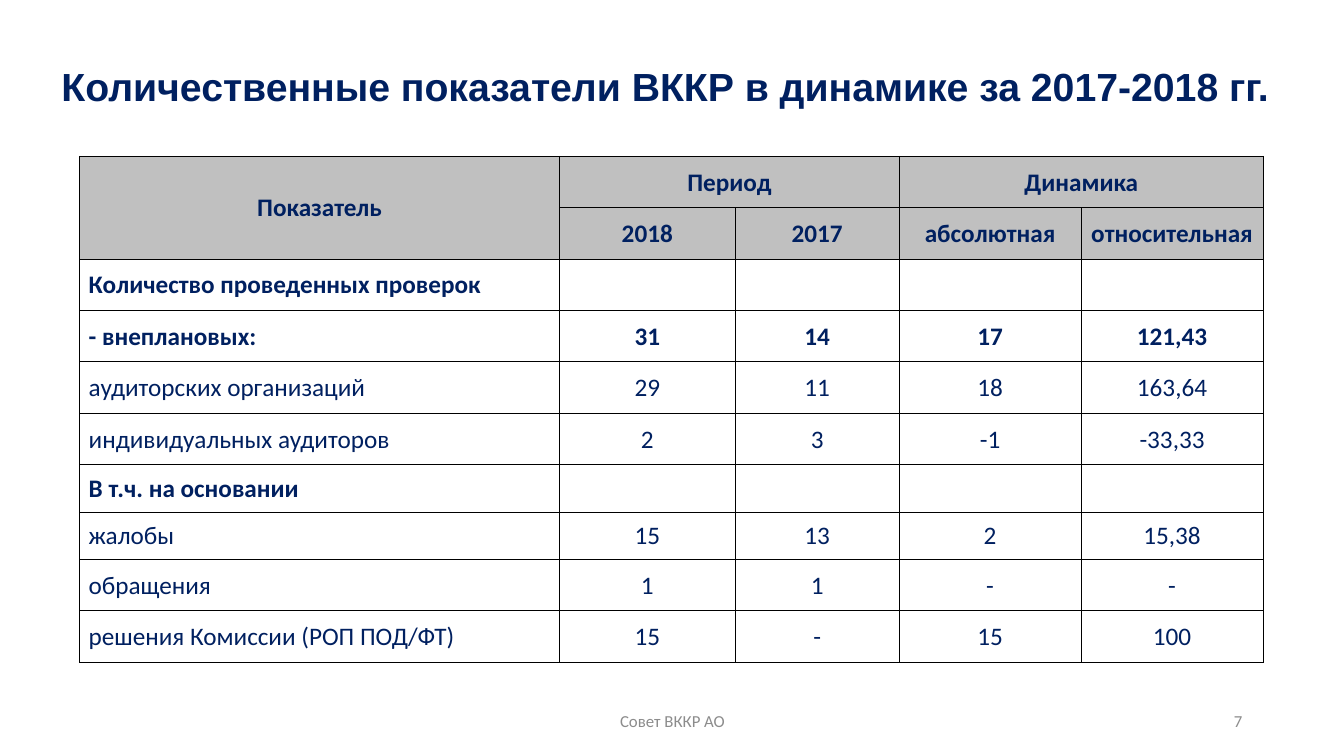
from dataclasses import dataclass
from typing import Any

from lxml.etree import SubElement
from pptx import Presentation
from pptx.dml.color import RGBColor
from pptx.enum.text import MSO_ANCHOR, PP_ALIGN
from pptx.oxml.ns import qn
from pptx.util import Inches, Pt


@dataclass(frozen=True)
class Theme:
    navy: str = "002060"
    head: str = "C0C0C0"
    gray: str = "8C8C8C"
    line: str = "000000"
    title: int = 28
    body: int = 18
    note: int = 12
    rule: float = 0.5


@dataclass(frozen=True)
class Row:
    label: str
    values: tuple[str, ...] = ("", "", "", "")
    bold: bool = False
    height: float = 0.51
    head: bool = False


@dataclass(frozen=True)
class Note:
    text: str
    left: float
    width: float
    align: Any


THEME = Theme()
WIDTHS = (4.76, 1.74, 1.63, 1.8, 1.81)
SPANS = ((0, 0, 1, 0), (0, 1, 0, 2), (0, 3, 0, 4))
ROWS = (
    Row("Показатель", ("Период", "", "Динамика", ""), True, head=True),
    Row("", ("2018", "2017", "абсолютная", "относительная"), True, head=True),
    Row("Количество проведенных проверок", bold=True),
    Row("- внеплановых:", ("31", "14", "17", "121,43"), True),
    Row("аудиторских организаций", ("29", "11", "18", "163,64")),
    Row("индивидуальных аудиторов", ("2", "3", "-1", "-33,33")),
    Row("В т.ч. на основании", bold=True, height=0.47),
    Row("жалобы", ("15", "13", "2", "15,38"), height=0.47),
    Row("обращения", ("1", "1", "-", "-")),
    Row("решения Комиссии (РОП ПОД/ФТ)", ("15", "-", "15", "100")),
)
NOTES = (
    Note("Совет ВККР АО", 4.42, 4.5, PP_ALIGN.CENTER),
    Note("7", 9.42, 3, PP_ALIGN.RIGHT),
)


def apply(item: Any, form: dict[str, Any]) -> None:
    for name, value in form.items():
        setattr(item, name, value)


def write(frame: Any, text: str, size: int, color: str, align: Any,
          bold: bool = False, face: str = "Calibri") -> None:
    frame.text = text
    para = frame.paragraphs[0]
    para.alignment = align
    apply(para.font, {"name": face, "size": Pt(size), "bold": bold})
    para.font.color.rgb = RGBColor.from_string(color)


def border(cell: Any) -> None:
    props = cell._tc.get_or_add_tcPr()
    for side in ("lnL", "lnR", "lnT", "lnB"):
        line = SubElement(props, qn(f"a:{side}"), w=str(Pt(THEME.rule)))
        fill = SubElement(line, qn("a:solidFill"))
        SubElement(fill, qn("a:srgbClr"), val=THEME.line)


def draw_cell(cell: Any, text: str, row: Row, label: bool) -> None:
    border(cell)
    if row.head:
        cell.fill.solid()
        cell.fill.fore_color.rgb = RGBColor.from_string(THEME.head)
    else:
        cell.fill.background()
    left = label and not row.head
    apply(cell, {
        "vertical_anchor": MSO_ANCHOR.MIDDLE,
        "margin_left": Inches(0.09 if left else 0.01),
        "margin_right": Inches(0.01),
        "margin_top": Inches(0.01),
        "margin_bottom": 0,
    })
    align = PP_ALIGN.JUSTIFY if left else PP_ALIGN.CENTER
    write(cell.text_frame, text, THEME.body, THEME.navy, align, row.bold)


def draw_table(slide: Any) -> None:
    high = sum(row.height for row in ROWS)
    table = slide.shapes.add_table(
        len(ROWS), len(WIDTHS), Inches(0.79), Inches(1.55),
        Inches(sum(WIDTHS)), Inches(high)).table
    apply(table, {"first_row": False, "horz_banding": False})
    for col, width in zip(table.columns, WIDTHS):
        col.width = Inches(width)
    for r, row in enumerate(ROWS):
        table.rows[r].height = Inches(row.height)
        for c, text in enumerate((row.label, *row.values)):
            draw_cell(table.cell(r, c), text, row, c == 0)
    for top, left, low, right in SPANS:
        table.cell(top, left).merge(table.cell(low, right))


def draw_title(slide: Any) -> None:
    title = slide.shapes.title
    apply(title, {"left": Inches(0.51), "top": Inches(0.4),
                  "width": Inches(12.24), "height": Inches(0.96)})
    frame = title.text_frame
    apply(frame, {"vertical_anchor": MSO_ANCHOR.MIDDLE, "word_wrap": True})
    write(frame, "Количественные показатели ВККР в динамике за 2017-2018 гг.",
          THEME.title, THEME.navy, PP_ALIGN.LEFT, True, "Arial")
    frame.paragraphs[0].line_spacing = 0.9


def draw_note(slide: Any, note: Note) -> None:
    box = slide.shapes.add_textbox(Inches(note.left), Inches(6.95),
                                   Inches(note.width), Inches(0.4))
    frame = box.text_frame
    apply(frame, {"vertical_anchor": MSO_ANCHOR.MIDDLE, "word_wrap": True})
    write(frame, note.text, THEME.note, THEME.gray, note.align)


def main() -> None:
    deck = Presentation()
    apply(deck, {"slide_width": Inches(13.33), "slide_height": Inches(7.5)})
    slide = deck.slides.add_slide(deck.slide_layouts[5])
    # Heading
    draw_title(slide)
    # Indicators by year
    draw_table(slide)
    # Footer and page number
    for note in NOTES:
        draw_note(slide, note)
    deck.save("out.pptx")


if __name__ == "__main__":
    main()
